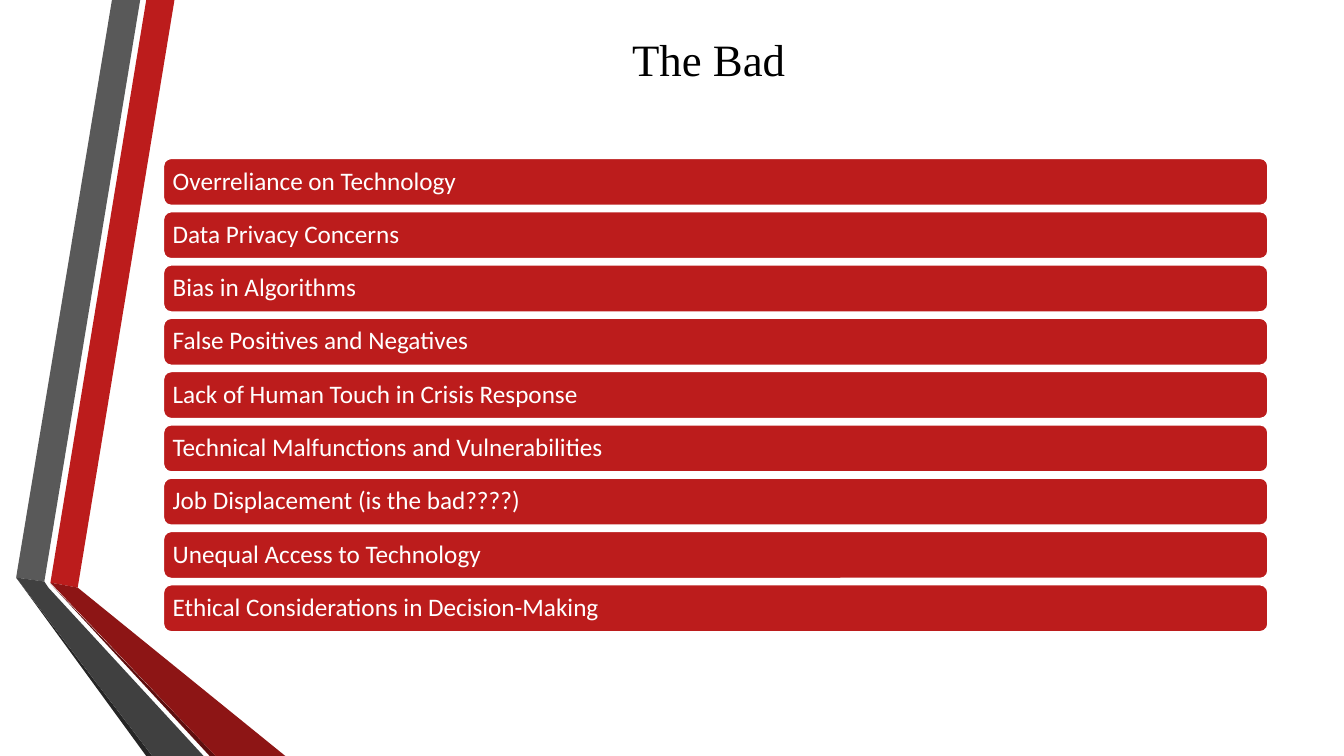
from pptx import Presentation
from pptx import util as u
from pptx.dml.color import RGBColor
from pptx.enum import shapes, text

WIDE, HIGH = u.Inches(13.33), u.Inches(7.5)

RED = RGBColor(0xBC, 0x1C, 0x1C)
WINE = RGBColor(0x8D, 0x15, 0x15)
DARK = RGBColor(0x5E, 0x0E, 0x0E)
GRAY = RGBColor(0x59, 0x59, 0x59)
COAL = RGBColor(0x40, 0x40, 0x40)
SOOT = RGBColor(0x26, 0x26, 0x26)
WHITE = RGBColor(0xFF, 0xFF, 0xFF)
BLACK = RGBColor(0, 0, 0)

BANDS = [
    (RED, [(3.75, 77.07), (5.78, 77.73), (12.98, 0), (10.88, 0)]),
    (GRAY, [(10.43, 0), (8.33, 0), (1.2, 76.4), (3.3, 76.93)]),
    (SOOT, [(1.2, 76.4), (10.88, 100), (11.33, 100)]),
    (DARK, [(3.75, 77.2), (15.6, 100), (16.05, 100)]),
    (WINE, [(3.75, 77.07), (16.05, 100), (21.23, 100), (5.78, 77.73)]),
    (COAL, [(15.15, 100), (3.6, 77.73), (3.3, 76.93), (1.2, 76.4), (11.33, 100)]),
]

RISKS = [
    "Overreliance on Technology",
    "Data Privacy Concerns",
    "Bias in Algorithms",
    "False Positives and Negatives",
    "Lack of Human Touch in Crisis Response",
    "Technical Malfunctions and Vulnerabilities",
    "Job Displacement (is the bad????)",
    "Unequal Access to Technology",
    "Ethical Considerations in Decision-Making",
]

LEFT, TOP, SPAN = 12.15, 20.93, 82.2
STEP, TALL = 7.05, 6.27


def across(share):
    return round(WIDE * share / 100)


def down(share):
    return round(HIGH * share / 100)


def box(left, top, width, height):
    return across(left), down(top), across(width), down(height)


def add_band(slide, color, points):
    first, *rest = [(across(x), down(y)) for x, y in points]
    path = slide.shapes.build_freeform(*first)
    path.add_line_segments(rest, close=True)
    band = path.convert_to_shape()
    band.shadow.inherit = False
    band.fill.solid()
    band.fill.fore_color.rgb = color
    band.line.fill.background()


def write(shape, words, face, size, color, align):
    frame = shape.text_frame
    frame.word_wrap = True
    frame.vertical_anchor = text.MSO_ANCHOR.MIDDLE
    para = frame.paragraphs[0]
    para.text = words
    para.alignment = align
    para.font.name = face
    para.font.size = u.Pt(size)
    para.font.color.rgb = color
    return frame


def add_title(slide, words):
    title = slide.shapes.add_textbox(*box(11.63, 3.73, SPAN, 8.13))
    write(title, words, "Times New Roman", 32, BLACK, text.PP_ALIGN.CENTER)


def add_bar(slide, row, words):
    bar = slide.shapes.add_shape(
        shapes.MSO_SHAPE.ROUNDED_RECTANGLE,
        *box(LEFT, TOP + row * STEP, SPAN, TALL))
    bar.shadow.inherit = False
    bar.fill.solid()
    bar.fill.fore_color.rgb = RED
    bar.line.color.rgb = WHITE
    bar.line.width = u.Pt(1.25)
    frame = write(bar, words, "Calibri", 18, WHITE, text.PP_ALIGN.LEFT)
    frame.margin_left = frame.margin_right = u.Inches(0.07)
    frame.margin_top = frame.margin_bottom = u.Inches(0.07)
    frame.paragraphs[0].line_spacing = 0.9


def main():
    deck = Presentation()
    deck.slide_width, deck.slide_height = WIDE, HIGH
    slide = deck.slides.add_slide(deck.slide_layouts[6])
    for color, points in BANDS:
        add_band(slide, color, points)
    add_title(slide, "The Bad")
    for row, words in enumerate(RISKS):
        add_bar(slide, row, words)
    deck.save("out.pptx")


if __name__ == "__main__":
    main()
